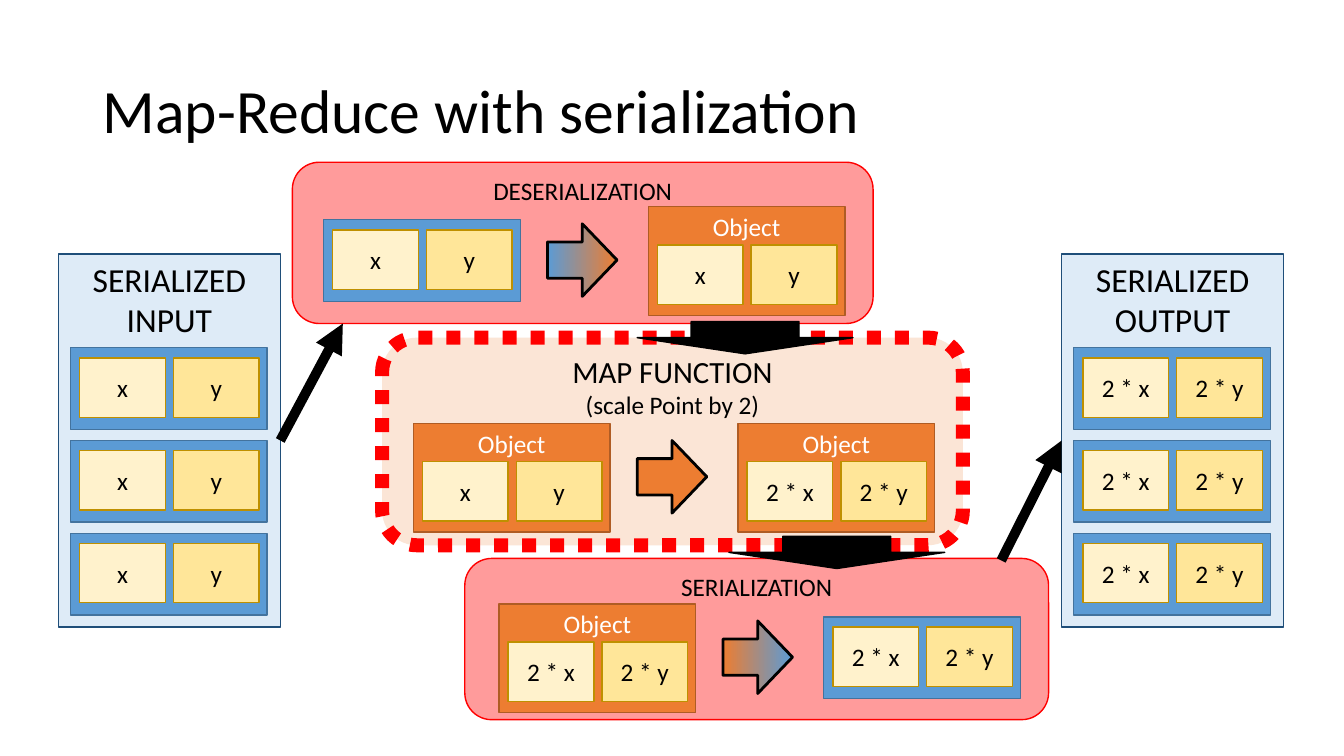
from lxml.etree import SubElement
from pptx import Presentation
from pptx.dml.color import RGBColor
from pptx.enum.dml import MSO_LINE
from pptx.enum.shapes import MSO_CONNECTOR, MSO_SHAPE
from pptx.enum.text import MSO_ANCHOR, PP_ALIGN
from pptx.oxml.ns import qn
from pptx.util import Emu, Pt

FONT = "Calibri"
BLACK, WHITE, RED = "000000", "FFFFFF", "FF0000"
BLUE, ORANGE = "5B9BD5", "ED7D31"
POINT = ("x", "y")
SCALED = ("2 * x", "2 * y")


def px(n):
    """Turn px into EMU at 100 px to the inch."""
    return Emu(n * 9144)


def rgb(color):
    """Turn a hex string into a colour."""
    return RGBColor.from_string(color)


def write(tf, lines, color=BLACK, anchor=MSO_ANCHOR.TOP, **fmt):
    """Fill a text frame with one paragraph per (text, size) line."""
    tf.word_wrap = True
    tf.vertical_anchor = anchor
    for i, (text, size) in enumerate(lines):
        p = tf.add_paragraph() if i else tf.paragraphs[0]
        for name, value in ({"alignment": PP_ALIGN.CENTER} | fmt).items():
            setattr(p, name, value)
        r = p.add_run()
        r.text = text
        for name, value in {"name": FONT, "size": Pt(size)}.items():
            setattr(r.font, name, value)
        r.font.color.rgb = rgb(color)


def block(s, box, fill, line, width=1, kind=MSO_SHAPE.RECTANGLE, lines=(), **fmt):
    """Draw a filled and outlined shape; a pair of fills makes a gradient."""
    sp = s.shapes.add_shape(kind, *map(px, box))
    sp.shadow.inherit = False
    if isinstance(fill, tuple):
        sp.fill.gradient()
        sp.fill.gradient_angle = 0
        for stop, color, position in zip(sp.fill.gradient_stops, fill, (0, 1)):
            stop.color.rgb = rgb(color)
            stop.position = position
    else:
        sp.fill.solid()
        sp.fill.fore_color.rgb = rgb(fill)
    sp.line.color.rgb = rgb(line)
    sp.line.width = Pt(width)
    write(sp.text_frame, lines, **fmt)
    return sp


def title(s, box, text):
    """Write the slide title."""
    sp = s.shapes.add_textbox(*map(px, box))
    write(sp.text_frame, [(text, 44)], anchor=MSO_ANCHOR.MIDDLE,
          alignment=PP_ALIGN.LEFT, line_spacing=0.9)


def fields(s, x, y, values):
    """Draw the two value cells side by side."""
    for i, (value, fill) in enumerate(zip(values, ("FFF2CC", "FFE699"))):
        block(s, (x + 93 * i, y, 85, 59), fill, "BF9000",
              lines=[(value, 18)], anchor=MSO_ANCHOR.MIDDLE)


def record(s, x, y, values):
    """Draw a serialized record."""
    block(s, (x, y, 195, 81), BLUE, "43739E")
    fields(s, x + 9, y + 10, values)


def point_object(s, x, y, values):
    """Draw a deserialized object, centred on the same row as a record."""
    y -= 13
    block(s, (x, y, 195, 108), ORANGE, "AF5C24", lines=[("Object", 18)], color=WHITE)
    fields(s, x + 9, y + 38, values)


def store(s, box, name, values):
    """Draw a panel of three serialized records."""
    x, y, w, h = box
    block(s, box, "DEEBF7", "1F4E79", lines=[("SERIALIZED", 24), (name, 24)])
    for i in range(3):
        record(s, x + 12, y + 93 + 92 * i, values)


def stage(s, box, row, lines, source, target, arrow, fill="FF9B9B", width=1):
    """Draw a processing step: a source, an arrow and a target."""
    x, y, w, h = box
    sp = block(s, box, fill, RED, width, MSO_SHAPE.ROUNDED_RECTANGLE, lines)
    left, y = x + w - 545, y + row
    for dx, (draw, values) in zip((0, 322), (source, target)):
        draw(s, left + dx, y, values)
    block(s, (left + 222, y + 4, 69, 72), arrow, BLACK, 2, MSO_SHAPE.RIGHT_ARROW)
    return sp


def flow(s, start, end):
    """Draw a thick arrow between a panel and a step."""
    c = s.shapes.add_connector(MSO_CONNECTOR.STRAIGHT, *map(px, start + end))
    c.line.color.rgb = rgb(BLACK)
    c.line.width = Pt(7)
    SubElement(c.line._get_or_add_ln(), qn("a:tailEnd"), type="triangle")
    SubElement(c._element.spPr, qn("a:effectLst"))


def main():
    """Build and save the slide."""
    prs = Presentation()
    prs.slide_width, prs.slide_height = px(1333), px(750)
    s = prs.slides.add_slide(prs.slide_layouts[6])
    title(s, (92, 40, 1150, 145), "Map-Reduce with serialization")
    store(s, (58, 252, 220, 370), "INPUT", POINT)
    store(s, (1053, 252, 220, 370), "OUTPUT", SCALED)
    stage(s, (290, 161, 576, 160), 57, [("DESERIALIZATION", 18)],
          (record, POINT), (point_object, POINT), (BLUE, ORANGE))
    sp = stage(s, (379, 335, 576, 206), 98,
               [("MAP FUNCTION", 22), ("(scale Point by 2)", 18)],
               (point_object, POINT), (point_object, SCALED), ORANGE, "FBE5D6", 10)
    sp.line.dash_style = MSO_LINE.ROUND_DOT
    stage(s, (461, 554, 579, 160), 58, [("SERIALIZATION", 18)],
          (point_object, SCALED), (record, SCALED), (ORANGE, BLUE))
    flow(s, (278, 437), (340, 321))
    flow(s, (993, 556), (1053, 437))
    for x, y in ((632, 319), (723, 532)):
        block(s, (x, y, 214, 32), BLACK, BLACK, kind=MSO_SHAPE.DOWN_ARROW)
    prs.save("out.pptx")


if __name__ == "__main__":
    main()
